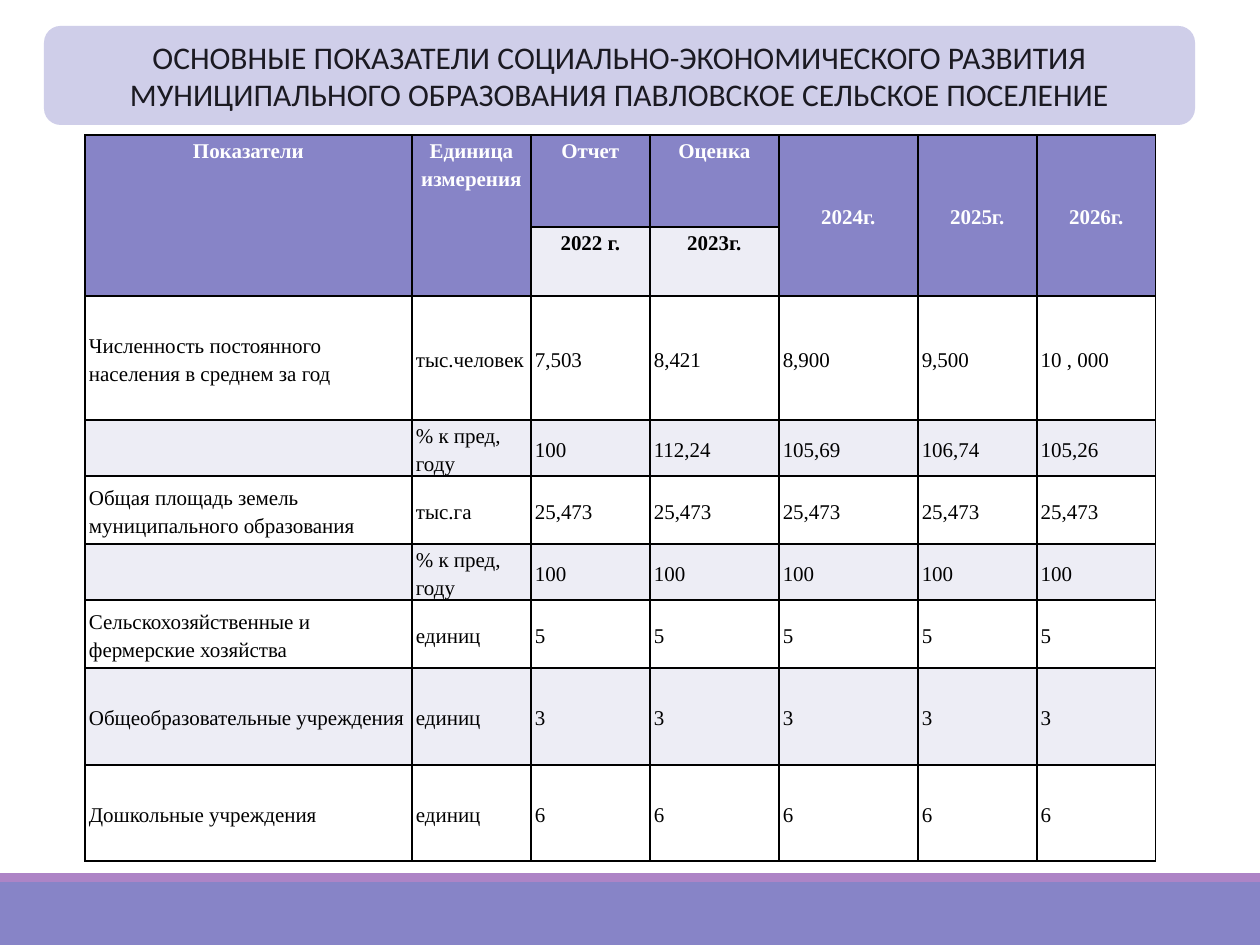
from lxml import etree
from pptx import Presentation
from pptx.dml.color import RGBColor
from pptx.enum.shapes import MSO_SHAPE
from pptx.enum.text import MSO_ANCHOR, PP_ALIGN
from pptx.oxml.ns import qn
from pptx.util import Pt

RECTANGLE, ROUNDED = MSO_SHAPE.RECTANGLE, MSO_SHAPE.ROUNDED_RECTANGLE
TOP, MIDDLE = MSO_ANCHOR.TOP, MSO_ANCHOR.MIDDLE
LEFT, CENTER = PP_ALIGN.LEFT, PP_ALIGN.CENTER

THEME = {
    "violet": "8784C7", "mauve": "AD84C6", "lavender": "CFCEE9",
    "band": "EDEDF5", "white": "FFFFFF", "black": "000000", "title_ink": "1B1A22",
    "title_font": "Calibri", "table_font": "Times New Roman",
    "title_size": 18, "table_size": 12, "border": 1,
}
PX = 914400 / 126  # EMU in one px


def add_box(kind, left, top, width, height, color):
    lengths = [round(value * PX) for value in (left, top, width, height)]
    shape = slide.shapes.add_shape(kind, *lengths)
    shape.shadow.inherit = False
    shape.fill.solid()
    shape.fill.fore_color.rgb = RGBColor.from_string(THEME[color])
    shape.line.fill.background()
    return shape


def add_text(paragraph, text, font, size, color, align, bold=False):
    paragraph.alignment = align
    run = paragraph.add_run()
    run.text = text
    run.font.name = THEME[font]
    run.font.size = Pt(THEME[size])
    run.font.bold = bold
    run.font.color.rgb = RGBColor.from_string(THEME[color])


presentation = Presentation()
presentation.slide_width = round(1260 * PX)
presentation.slide_height = round(945 * PX)
slide = presentation.slides.add_slide(presentation.slide_layouts[6])

# Footer bars
add_box(RECTANGLE, 0, 882, 1260, 63, "violet")
add_box(RECTANGLE, 0, 873, 1260, 9, "mauve")

# Title
title = add_box(ROUNDED, 44, 26, 1151, 99, "lavender")
title.text_frame.word_wrap = True
title.text_frame.vertical_anchor = MIDDLE
add_text(
    title.text_frame.paragraphs[0],
    "ОСНОВНЫЕ ПОКАЗАТЕЛИ СОЦИАЛЬНО-ЭКОНОМИЧЕСКОГО РАЗВИТИЯ "
    "МУНИЦИПАЛЬНОГО ОБРАЗОВАНИЯ ПАВЛОВСКОЕ СЕЛЬСКОЕ ПОСЕЛЕНИЕ",
    "title_font", "title_size", "title_ink", CENTER,
)

# Indicator table: two header rows, then data
rows = [
    ["Показатели", "Единица измерения", "Отчет", "Оценка", "2024г.", "2025г.", "2026г."],
    ["", "", "2022 г.", "2023г.", "", "", ""],
    ["Численность постоянного населения в среднем за год", "тыс.человек",
     "7,503", "8,421", "8,900", "9,500", "10 , 000"],
    ["", "% к пред, году", "100", "112,24", "105,69", "106,74", "105,26"],
    ["Общая площадь земель муниципального образования", "тыс.га"] + ["25,473"] * 5,
    ["", "% к пред, году"] + ["100"] * 5,
    ["Сельскохозяйственные и фермерские хозяйства", "единиц"] + ["5"] * 5,
    ["Общеобразовательные учреждения", "единиц"] + ["3"] * 5,
    ["Дошкольные учреждения", "единиц"] + ["6"] * 5,
]
column_widths = [327, 119, 119, 129, 139, 119, 119]
row_heights = [92, 69, 124, 56, 68, 56, 68, 97, 96]
split_columns = (2, 3)  # header columns with a separate year cell

frame = slide.shapes.add_table(
    len(rows), len(column_widths), round(85 * PX), round(135 * PX),
    round(sum(column_widths) * PX), round(sum(row_heights) * PX),
)
table = frame.table
for column, width in zip(table.columns, column_widths):
    column.width = round(width * PX)
for row, height in zip(table.rows, row_heights):
    row.height = round(height * PX)
for column_index in range(len(column_widths)):
    if column_index not in split_columns:
        table.cell(0, column_index).merge(table.cell(1, column_index))

for row_index, texts in enumerate(rows):
    for column_index, text in enumerate(texts):
        cell = table.cell(row_index, column_index)
        is_header = row_index < 2
        is_year = row_index == 1 and column_index in split_columns
        cell.margin_left = cell.margin_right = round(4 * PX)
        cell.margin_top = cell.margin_bottom = 0
        cell.vertical_anchor = TOP if is_header and column_index < 4 else MIDDLE

        # Borders come before the fill in the cell properties
        properties = cell._tc.get_or_add_tcPr()
        for side in ("a:lnL", "a:lnR", "a:lnT", "a:lnB"):
            line = etree.SubElement(properties, qn(side), w=str(Pt(THEME["border"])))
            solid = etree.SubElement(line, qn("a:solidFill"))
            etree.SubElement(solid, qn("a:srgbClr"), val=THEME["black"])

        if is_header and not is_year:
            fill, ink = "violet", "white"
        else:
            fill, ink = ("band" if row_index % 2 else "white"), "black"
        cell.fill.solid()
        cell.fill.fore_color.rgb = RGBColor.from_string(THEME[fill])

        if text:
            paragraph = cell.text_frame.paragraphs[0]
            paragraph.line_spacing = 1.2
            add_text(paragraph, text, "table_font", "table_size", ink,
                     CENTER if is_header else LEFT, is_header)

presentation.save("out.pptx")
